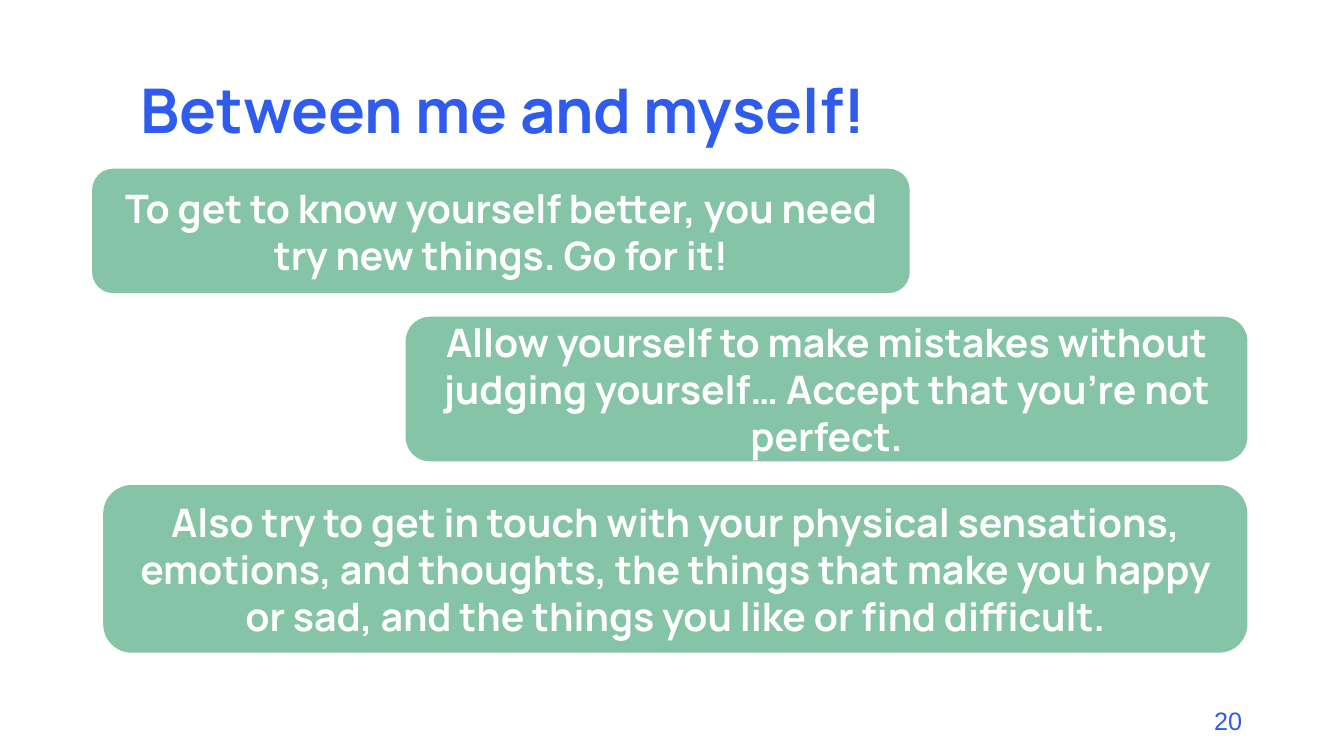
from pptx import Presentation
from pptx.dml.color import RGBColor
from pptx.enum.shapes import MSO_SHAPE
from pptx.enum.text import MSO_ANCHOR, PP_ALIGN
from pptx.util import Cm, Pt

ROUNDED = MSO_SHAPE.ROUNDED_RECTANGLE
TOP, MIDDLE = MSO_ANCHOR.TOP, MSO_ANCHOR.MIDDLE
LEFT, CENTER, RIGHT = PP_ALIGN.LEFT, PP_ALIGN.CENTER, PP_ALIGN.RIGHT

COLORS = {"blue": "2F5CEE", "green": "86C4A7", "white": "FFFFFF"}
TITLE = {"name": "Manrope", "size": Pt(44), "bold": True}
ADVICE = {"name": "Manrope", "size": Pt(28), "bold": True}
NUMBER = {"name": "Arial", "size": Pt(18)}

# Advice boxes: left, top, width, height in cm
ADVICE_BOXES = [
    ((2.34, 4.27, 20.57, 3.1),
     "To get to know yourself better, you need try new things. Go for it!"),
    ((10.24, 8, 21.18, 3.61),
     "Allow yourself to make mistakes without judging yourself… "
     "Accept that you’re not perfect."),
    ((2.62, 12.24, 28.8, 4.19),
     "Also try to get in touch with your physical sensations, emotions, "
     "and thoughts, the things that make you happy or sad, and the things "
     "you like or find difficult."),
]


def rgb(name):
    return RGBColor.from_string(COLORS[name])


def write(sp, text, fmt, color, align, anchor):
    tf = sp.text_frame
    tf.word_wrap = True
    tf.vertical_anchor = anchor
    p = tf.paragraphs[0]
    p.alignment = align
    r = p.add_run()
    r.text = text
    for key, value in fmt.items():
        setattr(r.font, key, value)
    r.font.color.rgb = rgb(color)
    return p


def add_title(s, box, text):
    sp = s.shapes.add_textbox(*map(Cm, box))
    p = write(sp, text, TITLE, "blue", LEFT, MIDDLE)
    p.line_spacing = 0.9


def add_advice(s, box, text):
    sp = s.shapes.add_shape(ROUNDED, *map(Cm, box))
    sp.shadow.inherit = False
    sp.fill.solid()
    sp.fill.fore_color.rgb = rgb("green")
    sp.line.color.rgb = rgb("green")
    sp.line.width = Pt(1)
    write(sp, text, ADVICE, "white", CENTER, MIDDLE)


def add_number(s, box, text):
    sp = s.shapes.add_textbox(*map(Cm, box))
    write(sp, text, NUMBER, "blue", RIGHT, TOP)


def main():
    prs = Presentation()
    prs.slide_width, prs.slide_height = Cm(33.87), Cm(19.05)
    s = prs.slides.add_slide(prs.slide_layouts[6])

    # Heading
    add_title(s, (3.3, 1.02, 30.05, 3.68), "Between me and myself!")

    # Staggered advice
    for box, text in ADVICE_BOXES:
        add_advice(s, box, text)

    # Page number
    add_number(s, (23.93, 17.65, 7.62, 1.02), "20")

    prs.save("out.pptx")


if __name__ == "__main__":
    main()
